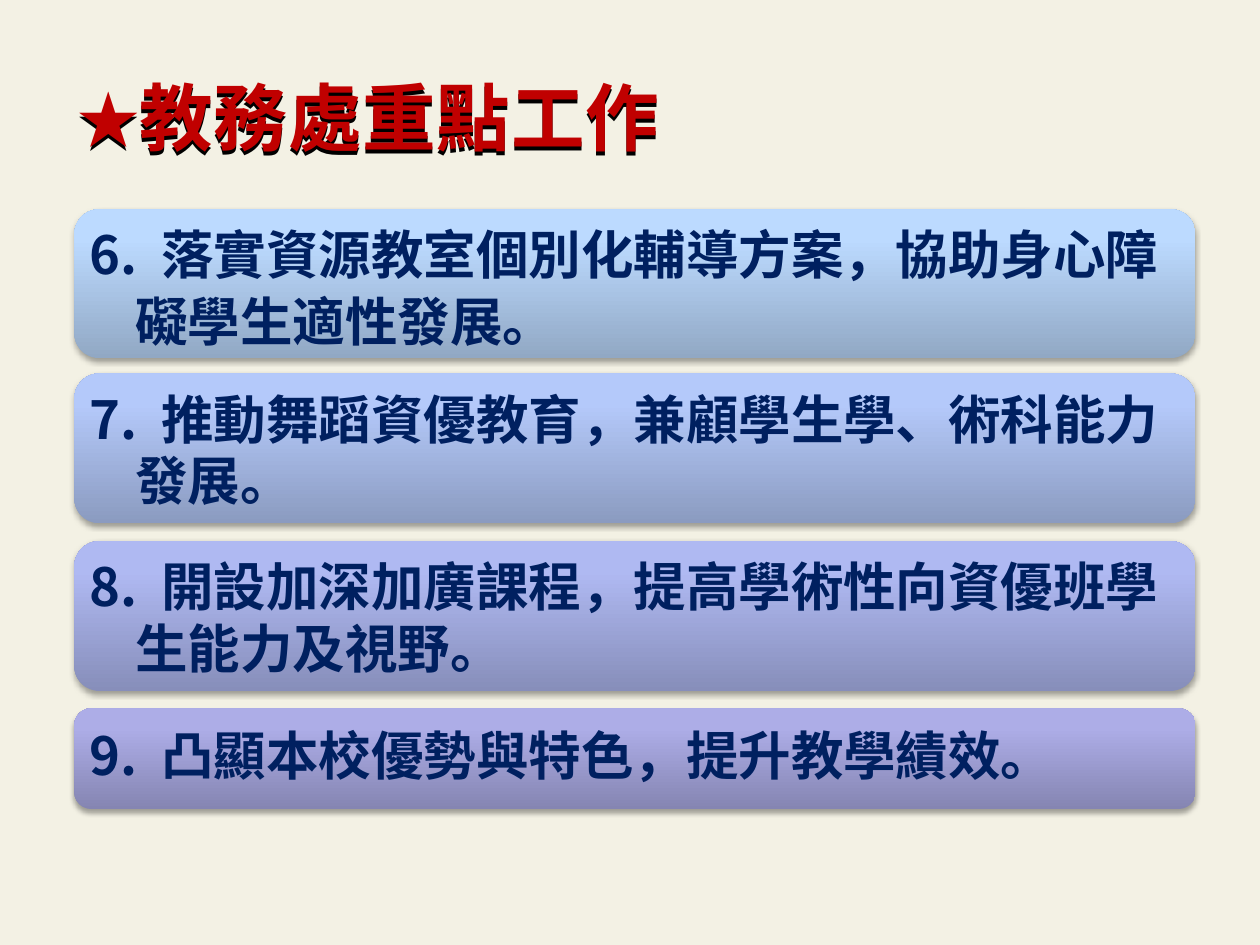
from lxml import etree
from pptx import Presentation
from pptx import util as u
from pptx.dml.color import RGBColor
from pptx.enum import shapes, text
from pptx.oxml.ns import qn


def rgb(value):
    return RGBColor.from_string(value)


def add_xml(parent, tag, **attributes):
    values = {name: str(value) for name, value in attributes.items()}
    return etree.SubElement(parent, qn(tag), values)


def add_colour(parent, value, alpha=100):
    colour = add_xml(parent, "a:srgbClr", val=value)
    if alpha < 100:
        add_xml(colour, "a:alpha", val=alpha * 1000)


class Deck:
    FONT = "Noto Sans CJK SC"
    BACKGROUND = "F3F1E4"
    TITLE = "C00000"
    BODY = "002060"
    LEFT, WIDTH = 1.5, 22.6
    PADDING = 0.3
    CORNER = 0.1667

    def __init__(self):
        self.deck = Presentation()
        self.deck.slide_width, self.deck.slide_height = u.Cm(25.4), u.Cm(19.05)
        self.slide = self.deck.slides.add_slide(self.deck.slide_layouts[5])
        background = self.slide.background.fill
        background.solid()
        background.fore_color.rgb = rgb(self.BACKGROUND)

    def style(self, paragraph, size, colour):
        for run in paragraph.runs:
            run.font.size, run.font.bold = u.Pt(size), True
            run.font.name, run.font.color.rgb = self.FONT, rgb(colour)
            add_xml(run.font._element, "a:ea", typeface=self.FONT)

    def shadow(self, shape, blur, distance, alpha):
        """Cast a black shadow straight down."""
        shape.shadow.inherit = False
        effects = shape._element.spPr.find(qn("a:effectLst"))
        outer = add_xml(effects, "a:outerShdw", blurRad=u.Pt(blur),
                        dist=u.Pt(distance), dir=90 * 60000,
                        algn="ctr", rotWithShape=0)
        add_colour(outer, "000000", alpha)

    def gradient(self, shape, stops):
        """Fill from bottom to top with (percent, colour) stops."""
        shape.fill.gradient()
        shape.fill.gradient_angle = 90
        stop_list = shape._element.spPr.find(".//" + qn("a:gsLst"))
        for old_stop in list(stop_list):
            stop_list.remove(old_stop)
        for percent, colour in stops:
            add_colour(add_xml(stop_list, "a:gs", pos=percent * 1000), colour)

    def title(self, wording):
        heading = self.slide.shapes.title
        heading.left, heading.top = u.Cm(1.3), u.Cm(1.32)
        heading.width, heading.height = u.Cm(12.45), u.Cm(2.06)
        frame = heading.text_frame
        frame.text = wording
        frame.word_wrap = False
        frame.auto_size = text.MSO_AUTO_SIZE.NONE
        frame.vertical_anchor = text.MSO_ANCHOR.MIDDLE
        line = frame.paragraphs[0]
        line.alignment = text.PP_ALIGN.LEFT
        properties = line._p.get_or_add_pPr()
        add_xml(properties, "a:buSzPct", val=85000)
        add_xml(properties, "a:buFont", typeface=self.FONT)
        add_xml(properties, "a:buChar", char="★")
        self.style(line, 42, self.TITLE)
        line.runs[0].font._element.set("spc", "50")
        self.shadow(heading, 0, 2, 100)

    def task(self, top, height, stops, lines, space_after=0):
        """Draw a rounded panel with a numbered task."""
        panel = self.slide.shapes.add_shape(
            shapes.MSO_SHAPE.ROUNDED_RECTANGLE,
            u.Cm(self.LEFT), u.Cm(top), u.Cm(self.WIDTH), u.Cm(height))
        panel.adjustments[0] = self.CORNER
        self.gradient(panel, stops)
        panel.line.fill.background()
        self.shadow(panel, 3.1, 1.8, 35)

        frame = panel.text_frame
        frame.text = "\n".join(lines)
        frame.word_wrap = True
        # The rounded corners already push the text area inwards.
        inset = u.Cm(self.PADDING - 0.29 * self.CORNER * height)
        frame.margin_left = frame.margin_right = inset
        frame.margin_top = frame.margin_bottom = inset
        single = len(lines) == 1
        frame.vertical_anchor = (text.MSO_ANCHOR.MIDDLE if single
                                 else text.MSO_ANCHOR.TOP)
        for index, line in enumerate(frame.paragraphs):
            line.alignment = text.PP_ALIGN.LEFT
            line.line_spacing = 0.9 if single else u.Pt(35)
            line.space_after = u.Pt(space_after)
            properties = line._p.get_or_add_pPr()
            if index == 0:
                tabs = add_xml(properties, "a:tabLst")
                add_xml(tabs, "a:tab", pos=u.Cm(1.45), algn="l")
            else:
                properties.set("marL", str(u.Cm(0.93)))
            self.style(line, 30, self.BODY)

    def save(self):
        self.deck.save("out.pptx")


def main():
    deck = Deck()
    deck.title("教務處重點工作")
    tasks = [
        (4.22, 3, ("91A8C4", "BCDAFF", "BEDBFF"),
         ["6.\t落實資源教室個別化輔導方案，協助身心障", "礙學生適性發展。"], 3),
        (7.53, 3.02, ("8B9BC0", "B4C9FA", "B3C9FC"),
         ["7.\t推動舞蹈資優教育，兼顧學生學、術科能力", "發展。"], 0),
        (10.91, 3.02, ("878EBA", "AFB9F2", "AEB9F4"),
         ["8.\t開設加深加廣課程，提高學術性向資優班學", "生能力及視野。"], 0),
        (14.28, 2.03, ("8585B2", "ADADE7", "ACACE9"),
         ["9.\t凸顯本校優勢與特色，提升教學績效。"], 0),
    ]
    for top, height, colours, lines, space_after in tasks:
        deck.task(top, height, list(zip((0, 80, 100), colours)),
                  lines, space_after)
    deck.save()


if __name__ == "__main__":
    main()
